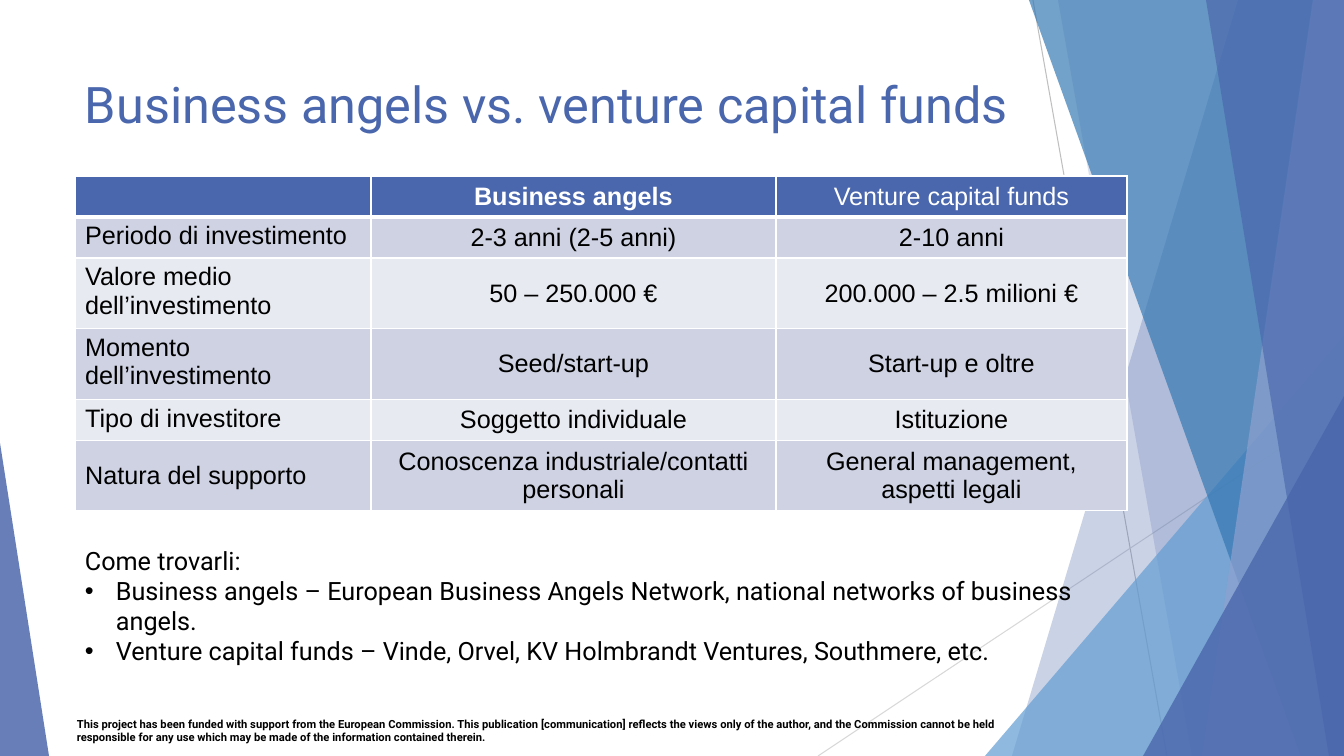
from dataclasses import dataclass

from lxml.etree import SubElement
from pptx import Presentation
from pptx.dml.color import RGBColor
from pptx.enum.shapes import MSO_CONNECTOR as Connector, MSO_SHAPE as Shape
from pptx.enum.text import MSO_ANCHOR as Anchor, PP_ALIGN as Align
from pptx.oxml.ns import qn
from pptx.slide import Slide
from pptx.table import _Cell as Cell
from pptx.text.text import TextFrame, _Paragraph as Paragraph
from pptx.util import Emu, Pt

PX = 914400 / 100.8
WIDTH, HEIGHT = 1344, 756

BLACK = RGBColor(0x00, 0x00, 0x00)
WHITE = RGBColor(0xFF, 0xFF, 0xFF)
INDIGO = RGBColor(0x4A, 0x66, 0xAC)
SKY = RGBColor(0x62, 0x9D, 0xD1)
OCEAN = RGBColor(0x34, 0x77, 0xB2)
LAVENDER = RGBColor(0x8F, 0xA1, 0xCF)
GREY = RGBColor(0xBF, 0xBF, 0xBF)
PALE_GREY = RGBColor(0xD8, 0xD8, 0xD8)
BAND_DARK = RGBColor(0xCE, 0xD2, 0xE2)
BAND_LIGHT = RGBColor(0xE8, 0xEA, 0xF1)


@dataclass(frozen=True)
class Ray:
    """A thin line between two points."""
    x1: int
    y1: int
    x2: int
    y2: int
    color: RGBColor


@dataclass(frozen=True)
class Facet:
    """A full-height facet with a slanted left edge."""
    top_x: int
    bottom_x: int
    color: RGBColor
    opacity: int


@dataclass(frozen=True)
class Wedge:
    """A triangle standing on the slide's bottom edge."""
    left: int
    top: int
    width: int
    apex: float
    color: RGBColor
    opacity: int


@dataclass(frozen=True)
class Style:
    """The look of a run of text."""
    font: str
    size: int
    color: RGBColor
    bold: bool = False


RAYS = [Ray(1033, 0, 1167, HEIGHT, GREY), Ray(WIDTH, 406, 818, HEIGHT, PALE_GREY)]
DECOR = [
    Facet(1238, 1012, INDIGO, 29),
    Facet(1058, 1192, INDIGO, 20),
    Wedge(985, 336, 359, 1, SKY, 71),
    Facet(1029, 1301, OCEAN, 69),
    Facet(1313, 1202, LAVENDER, 69),
    Facet(1206, 1329, INDIGO, 64),
    Wedge(1143, 396, 201, 1, INDIGO, 80),
    Wedge(0, 443, 49, 0, INDIGO, 84),
]
COLUMNS = [296, 405, 351]
ROWS = [
    (41, ["", "Business angels", "Venture capital funds"]),
    (41, ["Periodo di investimento", "2-3 anni (2-5 anni)", "2-10 anni"]),
    (66, ["Valore medio dell’investimento", "50 – 250.000 €", "200.000 – 2.5 milioni €"]),
    (66, ["Momento dell’investimento", "Seed/start-up", "Start-up e oltre"]),
    (41, ["Tipo di investitore", "Soggetto individuale", "Istituzione"]),
    (66, ["Natura del supporto", "Conoscenza industriale/contatti personali",
          "General management, aspetti legali"]),
]
TITLE = "Business angels vs. venture capital funds"
INTRO = "Come trovarli:"
SOURCES = [
    "Business angels – European Business Angels Network, national networks of business angels.",
    "Venture capital funds – Vinde, Orvel, KV Holmbrandt Ventures, Southmere, etc.",
]
DISCLAIMER = (
    "This project has been funded with support from the European Commission. "
    "This publication [communication] reflects the views only of the author, "
    "and the Commission cannot be held responsible for any use which may be made "
    "of the information contained therein."
)


def px(n: int) -> Emu:
    """Turn pixels into EMU."""
    return Emu(round(n * PX))


def add_run(p: Paragraph, text: str, style: Style) -> None:
    """Add a styled run to a paragraph."""
    r = p.add_run()
    r.text = text
    r.font.name, r.font.size, r.font.bold = style.font, Pt(style.size), style.bold
    r.font.color.rgb = style.color


def add_bullet(p: Paragraph) -> None:
    """Give a paragraph a round bullet and a hanging indent."""
    pPr = p._p.get_or_add_pPr()
    pPr.set("marL", str(px(31)))
    pPr.set("indent", str(-px(31)))
    SubElement(pPr, qn("a:buFont"), typeface="Arial")
    SubElement(pPr, qn("a:buChar"), char="•")


def add_ray(s: Slide, ray: Ray) -> None:
    """Draw a thin background line."""
    line = s.shapes.add_connector(
        Connector.STRAIGHT, px(ray.x1), px(ray.y1), px(ray.x2), px(ray.y2))
    line.line.color.rgb, line.line.width = ray.color, Pt(0.75)
    SubElement(line._element.spPr, qn("a:effectLst"))


def add_decor(s: Slide, item: Facet | Wedge) -> None:
    """Draw a translucent facet or wedge."""
    if isinstance(item, Facet):
        builder = s.shapes.build_freeform(item.top_x, 0, scale=PX)
        builder.add_line_segments([(WIDTH, 0), (WIDTH, HEIGHT), (item.bottom_x, HEIGHT)])
        sp = builder.convert_to_shape()
    else:
        sp = s.shapes.add_shape(
            Shape.ISOSCELES_TRIANGLE, px(item.left), px(item.top),
            px(item.width), px(HEIGHT - item.top))
        sp.adjustments[0] = item.apex
    sp.shadow.inherit = False
    sp.line.fill.background()
    sp.fill.solid()
    sp.fill.fore_color.rgb = item.color
    color = sp._element.spPr.find(qn("a:solidFill")).find(qn("a:srgbClr"))
    SubElement(color, qn("a:alpha"), val=str(item.opacity * 1000))


def add_text(s: Slide, left: int, top: int, width: int, height: int,
             text: str, style: Style) -> TextFrame:
    """Add a wrapping text box holding one paragraph."""
    tf = s.shapes.add_textbox(px(left), px(top), px(width), px(height)).text_frame
    tf.word_wrap = True
    add_run(tf.paragraphs[0], text, style)
    return tf


def add_borders(cell: Cell, top: int, bottom: int) -> None:
    """Give a cell white borders, with the widths above and below in points."""
    tcPr = cell._tc.get_or_add_tcPr()
    for side, width in (("L", 1), ("R", 1), ("T", top), ("B", bottom)):
        ln = SubElement(tcPr, qn(f"a:ln{side}"), w=str(Pt(width)))
        fill = SubElement(ln, qn("a:solidFill"))
        SubElement(fill, qn("a:srgbClr"), val=str(WHITE))


def add_comparison(s: Slide) -> None:
    """Add the table comparing angels and funds."""
    table = s.shapes.add_table(
        len(ROWS), len(COLUMNS), px(75), px(176), px(sum(COLUMNS)),
        px(sum(height for height, _ in ROWS))).table
    for column, width in zip(table.columns, COLUMNS):
        column.width = px(width)
    for i, (height, texts) in enumerate(ROWS):
        table.rows[i].height = px(height)
        for j, text in enumerate(texts):
            cell = table.cell(i, j)
            add_borders(cell, 3 if i == 1 else 1, 3 if i == 0 else 1)
            cell.fill.solid()
            cell.fill.fore_color.rgb = INDIGO if i == 0 else (BAND_LIGHT, BAND_DARK)[i % 2]
            top_anchored = j == 0 and i < len(ROWS) - 1
            cell.vertical_anchor = Anchor.TOP if top_anchored else Anchor.MIDDLE
            p = cell.text_frame.paragraphs[0]
            p.alignment = Align.CENTER if j else Align.LEFT
            if text:
                color = BLACK if i else WHITE
                add_run(p, text, Style("Arial", 18, color, (i, j) == (0, 1)))


def main() -> None:
    """Build the slide and save it."""
    prs = Presentation()
    prs.slide_width, prs.slide_height = px(WIDTH), px(HEIGHT)
    s = prs.slides.add_slide(prs.slide_layouts[6])
    for ray in RAYS:
        add_ray(s, ray)
    for item in DECOR:
        add_decor(s, item)
    add_text(s, 67, 712, 953, 37, DISCLAIMER, Style("Roboto", 8, BLACK, True))
    add_text(s, 75, 68, 948, 145, TITLE, Style("Roboto", 36, INDIGO))
    add_comparison(s)
    body = Style("Roboto", 18, BLACK)
    tf = add_text(s, 75, 540, 1052, 132, INTRO, body)
    for source in SOURCES:
        p = tf.add_paragraph()
        add_bullet(p)
        add_run(p, source, body)
    prs.save("out.pptx")


if __name__ == "__main__":
    main()
